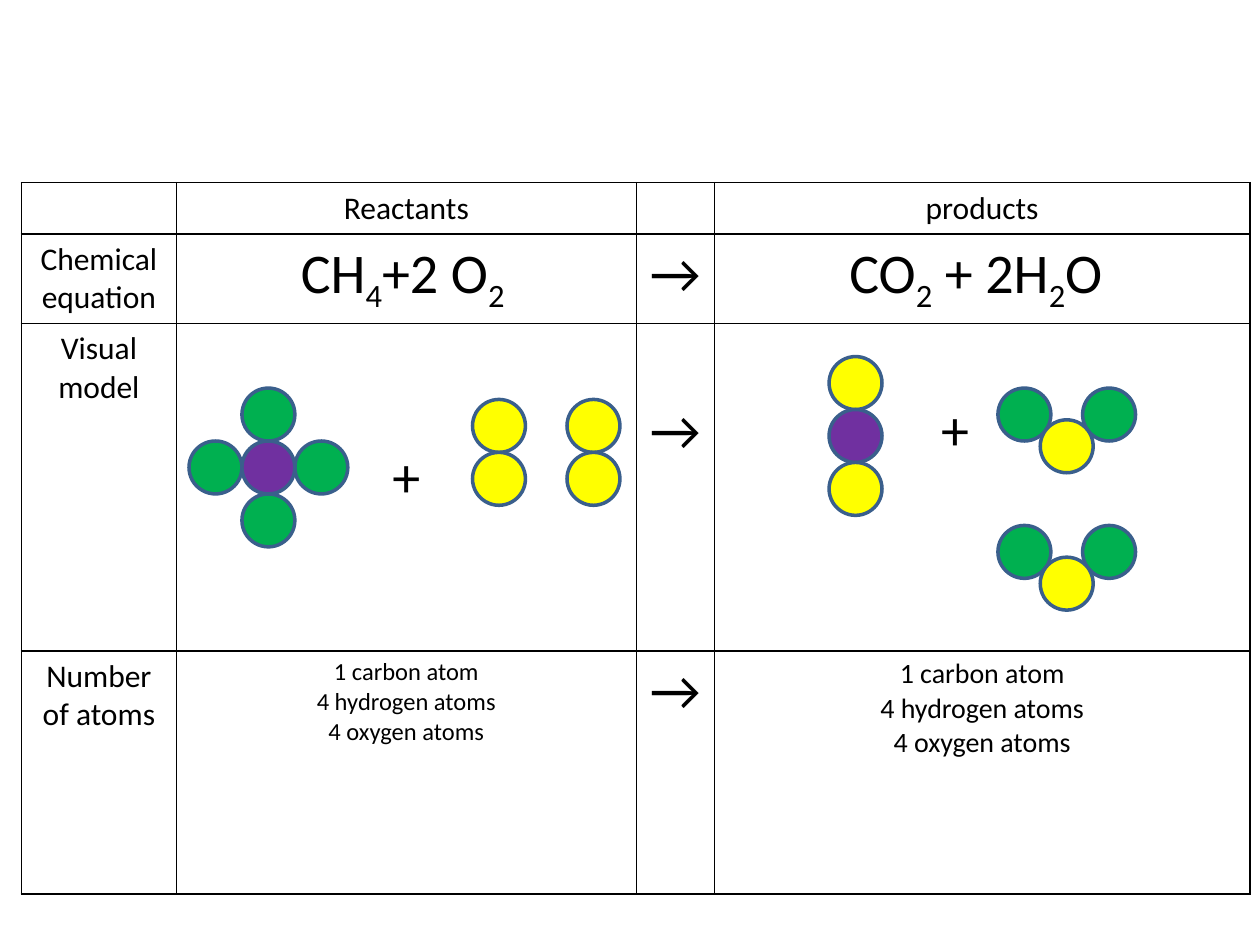
from lxml import etree
from pptx import Presentation
from pptx import util as u
from pptx.dml.color import RGBColor
from pptx.enum import shapes, text
from pptx.oxml import ns

BLACK, OUTLINE = "000000", "3A5F8C"
CARBON, HYDROGEN, OXYGEN = "7030A0", "00B050", "FFFF00"
ATOM = 0.42

METHANE = [(1, 0, HYDROGEN), (0, 1, HYDROGEN), (2, 1, HYDROGEN),
           (1, 2, HYDROGEN), (1, 1, CARBON)]
OXYGEN_PAIR = [(0, 0, OXYGEN), (0, 1, OXYGEN)]
CARBON_DIOXIDE = [(0, 0, OXYGEN), (0, 1, CARBON), (0, 2, OXYGEN)]
WATER = [(0, 0, HYDROGEN), (1.6, 0, HYDROGEN), (0.8, 0.6, OXYGEN)]

ATOM_COUNT = ["1 carbon atom", "4 hydrogen atoms", "4 oxygen atoms"]
ARROW = (["→"], dict(size=32))
LOW_ARROW = (["→"], dict(size=32, top=0.59))
BLANK = ([], {})
ROWS = [
    [BLANK, (["Reactants"], {}), BLANK, (["products"], {})],
    [(["Chemical equation"], {}), (["CH_4_+2 O_2 "], dict(size=32)),
     ARROW, (["CO_2_ + 2H_2_O "], dict(size=32))],
    [(["Visual model"], {}), (["+"], dict(size=32, top=0.96)),
     LOW_ARROW, (["+"], dict(size=32, top=0.59, left=1.8, align="LEFT"))],
    [(["Number of atoms"], {}), (ATOM_COUNT, dict(size=14)),
     ARROW, (ATOM_COUNT, dict(size=16))],
]


def colour(value):
    return RGBColor.from_string(value)


def write_text(frame, lines, size=18, align="CENTER"):
    frame.word_wrap = True
    for index, line in enumerate(lines):
        para = frame.paragraphs[0] if index == 0 else frame.add_paragraph()
        para.alignment = getattr(text.PP_ALIGN, align)
        for position, piece in enumerate(line.split("_")):
            span = para.add_run()
            span.text = piece
            span.font.size = u.Pt(size)
            span.font.name = "Calibri"
            span.font.color.rgb = colour(BLACK)
            if position % 2:
                span.font._element.set("baseline", "-25000")


def add_borders(cell):
    properties = cell._tc.get_or_add_tcPr()
    for side in ("lnL", "lnR", "lnT", "lnB"):
        line = etree.SubElement(properties, ns.qn("a:" + side), w=str(u.Pt(1)))
        fill = etree.SubElement(line, ns.qn("a:solidFill"))
        etree.SubElement(fill, ns.qn("a:srgbClr"), val=BLACK)


def fill_cell(cell, lines, top=0.05, left=0.1, **style):
    add_borders(cell)
    cell.fill.background()
    cell.margin_top, cell.margin_left = u.Inches(top), u.Inches(left)
    write_text(cell.text_frame, lines, **style)


def equation_table(page, left, top, widths, heights):
    table = page.shapes.add_table(
        len(heights), len(widths), u.Inches(left), u.Inches(top),
        u.Inches(sum(widths)), u.Inches(sum(heights))).table
    table.first_row = table.horz_banding = False
    for column, width in zip(table.columns, widths):
        column.width = u.Inches(width)
    for row, height, contents in zip(table.rows, heights, ROWS):
        row.height = u.Inches(height)
        for cell, (lines, style) in zip(row.cells, contents):
            fill_cell(cell, lines, **style)


def molecule(page, left, top, atoms):
    for across, down, element in atoms:
        atom = page.shapes.add_shape(
            shapes.MSO_SHAPE.OVAL, u.Inches(left + across * ATOM),
            u.Inches(top + down * ATOM), u.Inches(ATOM), u.Inches(ATOM))
        atom.shadow.inherit = False
        atom.fill.solid()
        atom.fill.fore_color.rgb = colour(element)
        atom.line.color.rgb = colour(OUTLINE)
        atom.line.width = u.Pt(2)


def visual_model(page, left, top):
    molecule(page, left, top + 0.25, METHANE)
    for offset in (2.25, 3):
        molecule(page, left + offset, top + 0.34, OXYGEN_PAIR)
    molecule(page, left + 5.08, top, CARBON_DIOXIDE)
    for offset in (0.25, 1.34):
        molecule(page, left + 6.42, top + offset, WATER)


def main():
    deck = Presentation()
    deck.slide_width, deck.slide_height = u.Inches(10), u.Inches(7.5)
    page = deck.slides.add_slide(deck.slide_layouts[6])
    equation_table(page, 0.17, 1.45, [1.23, 3.65, 0.62, 4.25],
                   [0.4, 0.71, 2.6, 1.93])
    visual_model(page, 1.5, 2.83)
    deck.save("out.pptx")


if __name__ == "__main__":
    main()
